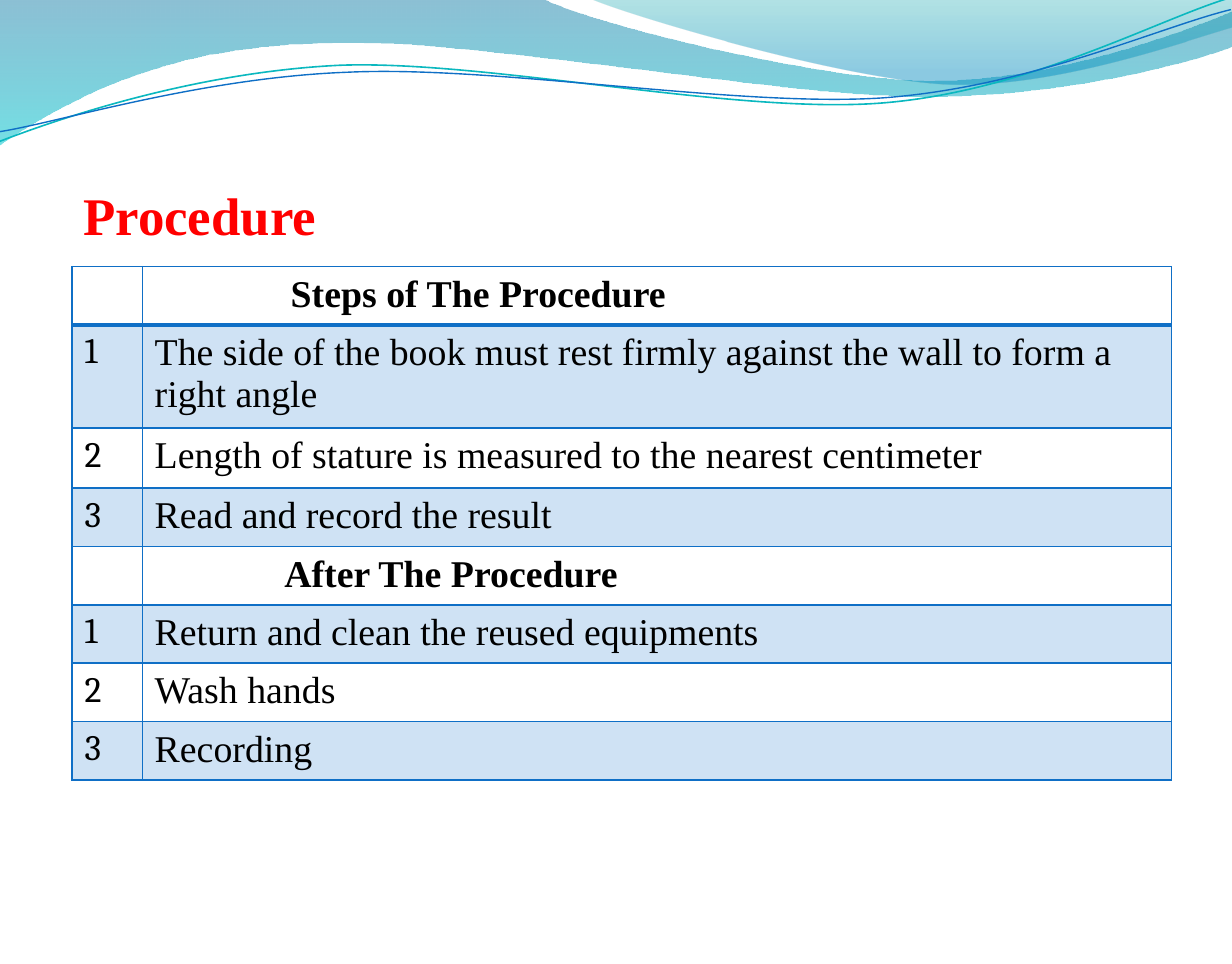
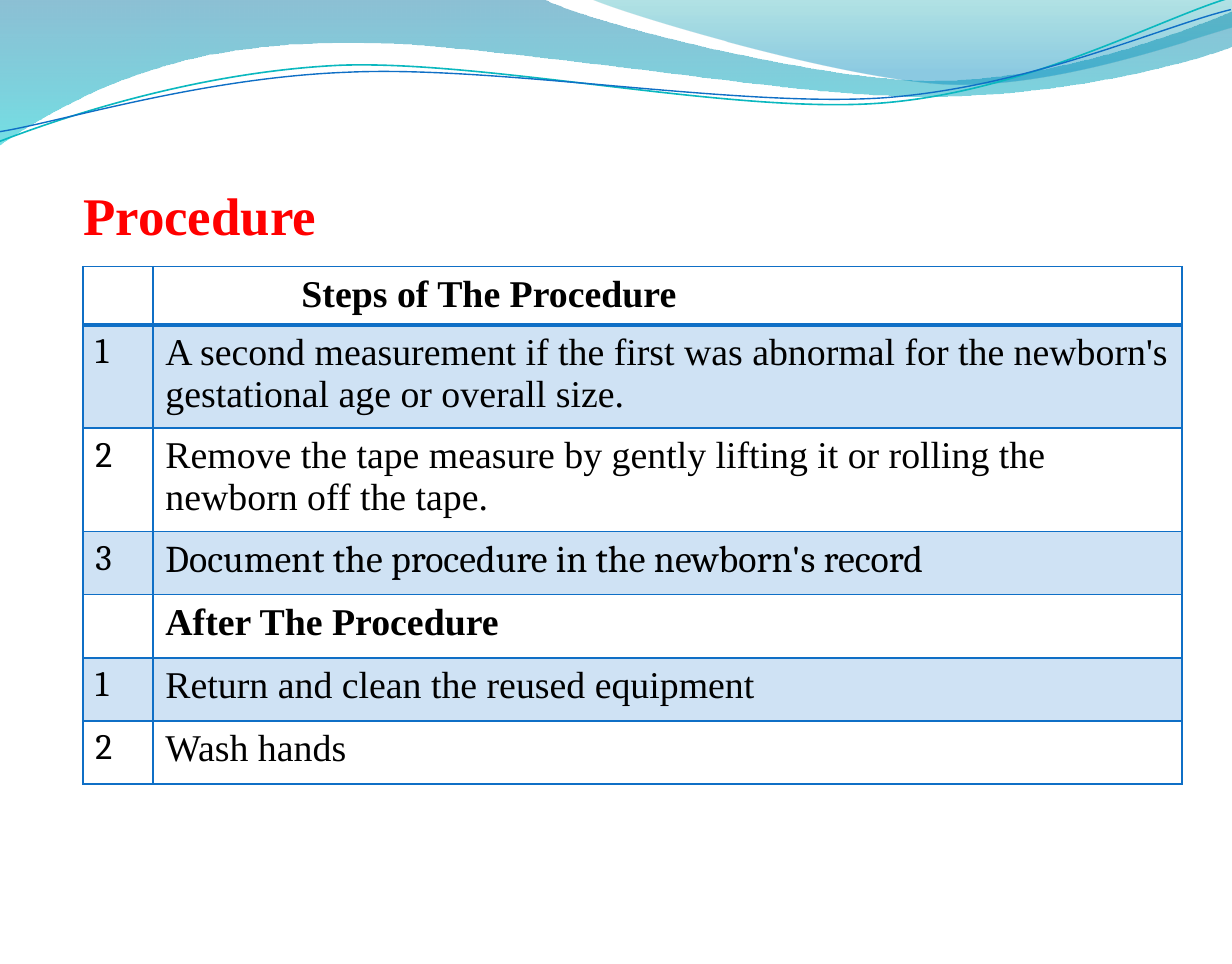
"""Builds two procedure slides with a shared wave band, title style and table style."""
from lxml.etree import SubElement
from pptx import Presentation
from pptx.dml.color import RGBColor as RGB
from pptx.enum.text import MSO_ANCHOR as Anchor
from pptx.oxml.ns import qn
from pptx.util import Cm, Pt

BLUE, TINT, RED, BLACK = "0F6FC6", "CFE2F4", "FF0000", "000000"
SERIF, BOOK = "Times New Roman", "Cambria"
PAD = 0.23


def paint(color, code):
    color.rgb = RGB.from_string(code)


def style(para, size, face, code, bold=False):
    font = para.font
    font.size, font.name, font.bold = Pt(size), face, bold
    paint(font.color, code)


deck = Presentation()
deck.slide_width, deck.slide_height = Cm(23.01), Cm(18.01)
blank = deck.slide_layouts[6]
for holder in list(blank.placeholders):
    holder.element.getparent().remove(holder.element)

BANDS = [
    ((0, 0),
     [[(10.13, -0.03)],
      [(10.95, 0.41), (15.27, 1.5), (17.45, 1.5)],
      [(19.63, 1.5), (22.05, 0.61), (23.01, 0.2)],
      [(23.01, 0.86)],
      [(22.61, 1.04), (20.02, 1.83), (17.15, 1.8)],
      [(14.3, 1.8), (8.79, 0.66), (5.92, 0.81)],
      [(2.97, 0.86), (1.07, 1.98), (-0.03, 2.72)]],
     [(0, "0074A1", 45), (1, "00C6CF", 55)]),
    ((11.02, -0.03),
     [[(11.71, 0.28), (15.7, 1.47), (17.68, 1.57)],
      [(19.69, 1.65), (22.12, 0.76), (23.01, 0.51)],
      [(23.01, 0)]],
     [(0, "00A1A9", 30), (0.8, "008BBF", 45)]),
    ((0, 2.64),
     [[(1.12, 2.21), (3.63, 1.35), (6.35, 1.22)],
      [(9.09, 1.12), (13.64, 2.13), (16.41, 1.93)],
      [(19.15, 1.73), (21.59, 0.38), (22.94, -0.03)]],
     ("0AB8BF", 0.85)),
    ((0, 2.46),
     [[(1.09, 2.29), (3.76, 1.45), (6.5, 1.35)],
      [(9.27, 1.22), (13.74, 2.01), (16.48, 1.83)],
      [(19.23, 1.63), (21.64, 0.51), (22.99, 0.18)]],
     (BLUE, 0.75)),
]
PAGES = [
    (1.35, [
        ("", "Steps of The Procedure", 1.09, 2.77),
        ("1", "The side of the book must rest firmly against the wall to form a right angle", 1.93, PAD),
        ("2", "Length of stature is measured to the nearest centimeter", 1.12, PAD),
        ("3", "Read and record the result", 1.09, PAD),
        ("", "After The Procedure", 1.09, 2.65),
        ("1", "Return and clean the reused equipments", 1.09, PAD),
        ("2", "Wash hands", 1.09, PAD),
        ("3", "Recording", 1.09, PAD),
    ]),
    (1.55, [
        ("", "Steps of The Procedure", 1.09, 2.77),
        ("1", "A second measurement if the first was abnormal for the newborn's "
              "gestational age or overall size.", 1.93, PAD),
        ("2", "Remove the tape measure by gently lifting it or rolling the "
              "newborn off the tape.", 1.93, PAD),
        ("3", "Document the procedure in the newborn's record", 1.18, PAD),
        ("", "After The Procedure", 1.18, PAD),
        ("1", "Return and clean the reused equipment", 1.18, PAD),
        ("2", "Wash hands", 1.18, PAD),
    ]),
]

slides = [deck.slides.add_slide(blank) for page in PAGES]
waves = []
for start, parts, look in BANDS:
    solid = isinstance(look, list)
    pen = slides[0].shapes.build_freeform(Cm(start[0]), Cm(start[1]))
    pen.add_line_segments([(Cm(x), Cm(y)) for part in parts for x, y in part], close=solid)
    wave = pen.convert_to_shape()
    wave.shadow.inherit = False
    nodes = iter(list(wave.element.iter(qn("a:lnTo"))))
    for part in parts:
        first, *rest = [next(nodes) for dot in part]
        if rest:
            first.tag = qn("a:cubicBezTo")
        for node in rest:
            first.append(node[0])
            node.getparent().remove(node)
    if solid:
        wave.fill.gradient()
        wave.fill.gradient_angle = 270
        for stop, (place, code, _) in zip(wave.fill.gradient_stops, look):
            stop.position = place
            paint(stop.color, code)
        for node, (_, _, alpha) in zip(wave.element.iter(qn("a:srgbClr")), look):
            SubElement(node, qn("a:alpha"), val=str(alpha * 1000))
        wave.line.fill.background()
    else:
        wave.fill.background()
        paint(wave.line.color, look[0])
        wave.line.width = Pt(look[1])
    waves.append(wave)
for wave in waves:
    blank.shapes.element.append(wave.element)

for slide, (left, rows) in zip(slides, PAGES):
    frame = slide.shapes.add_textbox(Cm(1.56), Cm(1.6), Cm(20.7), Cm(3)).text_frame
    frame.word_wrap = True
    frame.vertical_anchor = Anchor.BOTTOM
    frame.margin_left = frame.margin_right = frame.margin_bottom = 0
    title = frame.paragraphs[0]
    title.text = "Procedure"
    title.line_spacing, title.space_before = 1.5, Pt(2.9)
    style(title, 28, SERIF, RED, True)

    high = sum(row[2] for row in rows)
    table = slide.shapes.add_table(len(rows), 2, Cm(left), Cm(4.98), Cm(20.53), Cm(high)).table
    table.first_row = table.horz_banding = False
    table.columns[0].width, table.columns[1].width = Cm(1.31), Cm(19.22)
    for r, (mark, text, tall, inset) in enumerate(rows):
        table.rows[r].height = Cm(tall)
        for c, words in enumerate((mark, text)):
            cell = table.cell(r, c)
            props = cell._tc.get_or_add_tcPr()
            for side in "LRTB":
                thick = (r, side) in ((0, "B"), (1, "T"))
                edge = SubElement(props, qn("a:ln" + side), w=str(Pt(2 if thick else 1)))
                SubElement(SubElement(edge, qn("a:solidFill")), qn("a:srgbClr"), val=BLUE)
            if r % 2:
                cell.fill.solid()
                paint(cell.fill.fore_color, TINT)
            else:
                cell.fill.background()
            cell.margin_left = Cm(inset if c else PAD)
            cell.margin_right = Cm(PAD)
            cell.margin_bottom = Cm(0.08)
            para = cell.text_frame.paragraphs[0]
            para.text = words
            book = c == 0 or text.startswith("Document")
            style(para, 20 if c else 19, BOOK if book else SERIF, BLACK, not mark)

deck.save("out.pptx")
